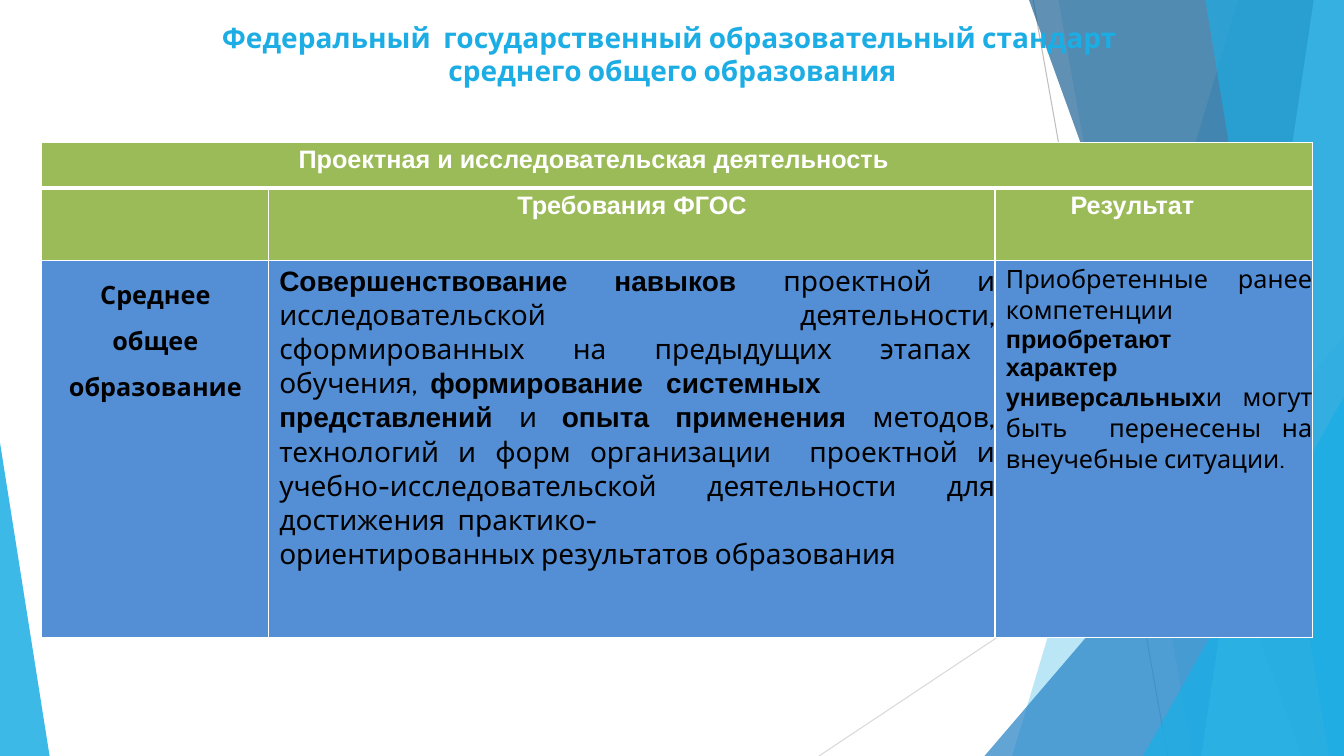
"""Builds a slide with a table on project work in upper secondary education."""
from dataclasses import dataclass

from lxml.etree import SubElement
from pptx import Presentation
from pptx.dml.color import RGBColor
from pptx.enum.shapes import MSO_CONNECTOR, MSO_SHAPE
from pptx.enum.text import MSO_AUTO_SIZE, PP_ALIGN
from pptx.oxml.ns import qn
from pptx.util import Inches, Pt

COLS, ROWS = 160, 90
WIDTH, HEIGHT = Inches(13.33), Inches(7.5)


@dataclass(frozen=True)
class Theme:
    sky: str = "1CADE4"
    blue: str = "2683C6"
    navy: str = "1D6294"
    pale: str = "77CEEF"
    green: str = "9BBA58"
    cell: str = "548ED4"
    white: str = "FFFFFF"
    black: str = "000000"
    gray: str = "BFBFBF"
    light_gray: str = "D9D9D9"
    sans: str = "Arial"
    body: str = "Cabin"
    large: int = 20
    normal: int = 18


T = Theme()


@dataclass(frozen=True)
class Ray:
    x1: float
    y1: float
    x2: float
    y2: float
    color: str


@dataclass(frozen=True)
class Band:
    top: float
    bottom: float
    color: str
    alpha: int


@dataclass(frozen=True)
class Wedge:
    x: float
    y: float
    w: float
    apex: int
    color: str
    alpha: int


@dataclass(frozen=True)
class Run:
    text: str
    font: str = T.sans
    size: int = T.large
    color: str = T.black
    bold: bool = True


@dataclass(frozen=True)
class Para:
    runs: list[Run]
    align: PP_ALIGN = PP_ALIGN.LEFT
    indent: float = 0
    before: float = 0
    spacing: float = 1.0


RAYS = [Ray(123, 0, 139, ROWS, T.gray), Ray(COLS, 48.4, 97.5, ROWS, T.light_gray)]
FACETS = [
    Band(147.4, 120.5, T.sky, 30),
    Band(126, 142, T.sky, 20),
    Wedge(117.2, 40, 42.8, 1, T.blue, 72),
    Band(122.5, 155, T.navy, 70),
    Band(156.4, 143, T.pale, 70),
    Band(143.5, 158.2, T.sky, 65),
    Wedge(136.1, 47.2, 23.9, 1, T.sky, 80),
    Wedge(0, 52.7, 5.9, 0, T.sky, 85),
]


def header(text: str, **form) -> list[Para]:
    return [Para([Run(text, size=T.normal, color=T.white)], before=2.4, **form)]


def plain(text: str, size: int = T.large) -> Run:
    return Run(text, T.body, size, bold=False)


def justified(*runs: Run, before: float = 0) -> Para:
    return Para(list(runs), PP_ALIGN.JUSTIFY, 1.3, before)


LEVEL = [
    Para([Run(word, T.body, T.normal)], PP_ALIGN.CENTER, 0.1, before, 1.5)
    for word, before in (("Среднее", 2.8), ("общее", 0), ("образование", 0))
]
DEMANDS = [
    justified(
        Run("Совершенствование навыков "),
        plain("проектной и исследовательской деятельности, сформированных  на  "
              "предыдущих  этапах  обучения,  "),
        Run("формирование   системных"), before=3),
    justified(
        Run("представлений "), plain("и "), Run("опыта применения "),
        plain("методов, технологий и форм организации  проектной и "
              "учебно-исследовательской  деятельности  для достижения  практико-")),
    justified(plain("ориентированных результатов образования")),
]
RESULT = [
    justified(plain("Приобретенные ранее компетенции ", T.normal),
              Run("приобретают", size=T.normal), before=3),
    justified(Run("характер универсальных", size=T.normal),
              plain("и  могут быть  перенесены на внеучебные ситуации.", T.normal)),
]
TABLE = [
    [header("Проектная и исследовательская деятельность", indent=30.6), [], []],
    [[], header("Требования ФГОС", align=PP_ALIGN.CENTER, indent=0.1),
     header("Результат", indent=9)],
    [LEVEL, DEMANDS, RESULT],
]
COL_SPANS, ROW_SPANS = (27, 86.5, 37.8), (5.4, 8.6, 44.9)


def col(n: float) -> int:
    return round(WIDTH * n / COLS)


def row(n: float) -> int:
    return round(HEIGHT * n / ROWS)


def write(p, text: str, *, font: str, size: int, color: str, bold: bool) -> None:
    r = p.add_run()
    r.text = text
    r.font.name, r.font.size, r.font.bold = font, Pt(size), bold
    r.font.color.rgb = RGBColor.from_string(color)


def fill_text(tf, paras: list[Para]) -> None:
    for i, para in enumerate(paras):
        p = tf.add_paragraph() if i else tf.paragraphs[0]
        p.alignment, p.line_spacing = para.align, para.spacing
        p.space_before = Pt(para.before)
        pPr = p._p.get_or_add_pPr()
        pPr.set("marL", str(col(para.indent)))
        pPr.set("indent", "0")
        for run in para.runs:
            write(p, run.text, font=run.font, size=run.size,
                  color=run.color, bold=run.bold)


def draw_ray(s, ray: Ray) -> None:
    line = s.shapes.add_connector(MSO_CONNECTOR.STRAIGHT, col(ray.x1), row(ray.y1),
                                  col(ray.x2), row(ray.y2))
    line.line.color.rgb = RGBColor.from_string(ray.color)
    line.line.width = Pt(0.75)
    SubElement(line._element.spPr, qn("a:effectLst"))


def draw_facet(s, facet: Band | Wedge) -> None:
    if isinstance(facet, Band):
        builder = s.shapes.build_freeform(col(facet.top), 0)
        builder.add_line_segments(
            [(WIDTH, 0), (WIDTH, HEIGHT), (col(facet.bottom), HEIGHT)], close=True)
        sp = builder.convert_to_shape()
    else:
        sp = s.shapes.add_shape(MSO_SHAPE.ISOSCELES_TRIANGLE, col(facet.x), row(facet.y),
                                col(facet.w), row(ROWS - facet.y))
        sp.adjustments[0] = facet.apex
    sp.shadow.inherit = False
    sp.line.fill.background()
    sp.fill.solid()
    sp.fill.fore_color.rgb = RGBColor.from_string(facet.color)
    color = sp._element.spPr.find(qn("a:solidFill"))[0]
    SubElement(color, qn("a:alpha"), val=str(facet.alpha * 1000))


def draw_title(s) -> None:
    tf = s.shapes.add_textbox(col(25.4), row(2.3), col(109.2), row(8.3)).text_frame
    tf.word_wrap, tf.auto_size = True, MSO_AUTO_SIZE.SHAPE_TO_FIT_TEXT
    tf.margin_left = tf.margin_right = tf.margin_bottom = 0
    tf.margin_top = row(0.12)
    text = ("Федеральный  государственный образовательный стандарт  "
            "среднего общего образования")
    fill_text(tf, [Para([Run(text, T.body, color=T.sky)], PP_ALIGN.CENTER, 0.1, 1)])


def set_borders(cell, **widths: float) -> None:
    tcPr = cell._tc.get_or_add_tcPr()
    for i, side in enumerate("LRTB"):
        ln = SubElement(tcPr, qn(f"a:ln{side}"), w=str(Pt(widths.get(side, 1))))
        SubElement(SubElement(ln, qn("a:solidFill")), qn("a:srgbClr"), val=T.white)
        tcPr.insert(i, ln)


def draw_table(s) -> None:
    table = s.shapes.add_table(3, 3, col(4.95), row(17), col(sum(COL_SPANS)),
                               row(sum(ROW_SPANS))).table
    table.first_row = table.horz_banding = False
    for i, span in enumerate(COL_SPANS):
        table.columns[i].width = col(span)
    for i, span in enumerate(ROW_SPANS):
        table.rows[i].height = row(span)
    table.cell(0, 0).merge(table.cell(0, 2))
    for i, line in enumerate(TABLE):
        for j, paras in enumerate(line):
            cell = table.cell(i, j)
            cell.margin_left = cell.margin_right = cell.margin_bottom = 0
            cell.margin_top = row(0.48 if i == 2 else 0.36)
            cell.fill.solid()
            cell.fill.fore_color.rgb = RGBColor.from_string(T.cell if i == 2 else T.green)
            set_borders(cell, T=3 if i == 1 else 1, B=3 if i == 0 else 1)
            fill_text(cell.text_frame, paras)


def main() -> None:
    prs = Presentation()
    prs.slide_width, prs.slide_height = WIDTH, HEIGHT
    s = prs.slides.add_slide(prs.slide_layouts[6])
    for ray in RAYS:
        draw_ray(s, ray)
    for facet in FACETS:
        draw_facet(s, facet)
    draw_title(s)
    draw_table(s)
    prs.save("out.pptx")


if __name__ == "__main__":
    main()
